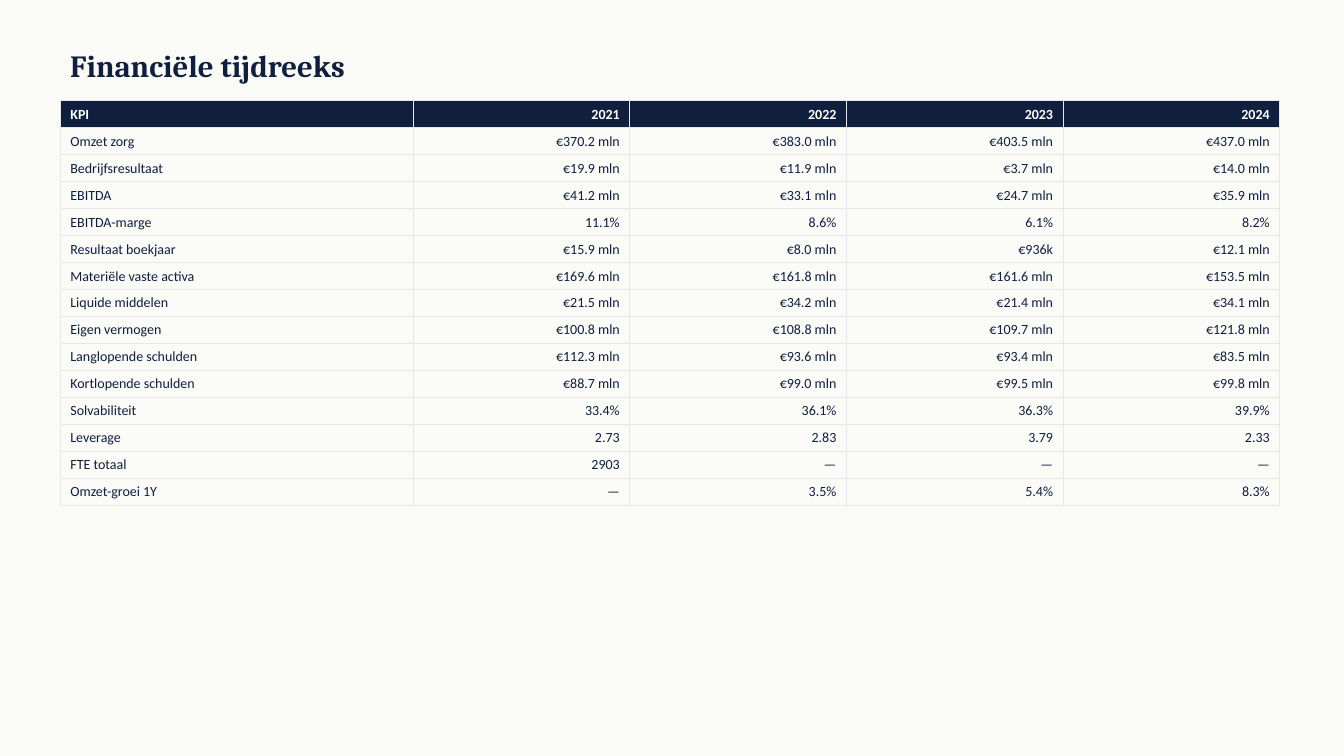
from lxml.etree import SubElement
from pptx import Presentation
from pptx.dml.color import RGBColor
from pptx.enum.text import MSO_ANCHOR, PP_ALIGN
from pptx.oxml.ns import qn
from pptx.util import Cm, Pt

TITLE = "Financiële tijdreeks"
HEADER = ("KPI", "2021", "2022", "2023", "2024")
KPIS = [
    ("Omzet zorg", "€370.2 mln", "€383.0 mln", "€403.5 mln", "€437.0 mln"),
    ("Bedrijfsresultaat", "€19.9 mln", "€11.9 mln", "€3.7 mln", "€14.0 mln"),
    ("EBITDA", "€41.2 mln", "€33.1 mln", "€24.7 mln", "€35.9 mln"),
    ("EBITDA-marge", "11.1%", "8.6%", "6.1%", "8.2%"),
    ("Resultaat boekjaar", "€15.9 mln", "€8.0 mln", "€936k", "€12.1 mln"),
    ("Materiële vaste activa", "€169.6 mln", "€161.8 mln", "€161.6 mln", "€153.5 mln"),
    ("Liquide middelen", "€21.5 mln", "€34.2 mln", "€21.4 mln", "€34.1 mln"),
    ("Eigen vermogen", "€100.8 mln", "€108.8 mln", "€109.7 mln", "€121.8 mln"),
    ("Langlopende schulden", "€112.3 mln", "€93.6 mln", "€93.4 mln", "€83.5 mln"),
    ("Kortlopende schulden", "€88.7 mln", "€99.0 mln", "€99.5 mln", "€99.8 mln"),
    ("Solvabiliteit", "33.4%", "36.1%", "36.3%", "39.9%"),
    ("Leverage", "2.73", "2.83", "3.79", "2.33"),
    ("FTE totaal", "2903", "—", "—", "—"),
    ("Omzet-groei 1Y", "—", "3.5%", "5.4%", "8.3%"),
]

NAVY = RGBColor(0x0F, 0x1F, 0x3D)
WHITE = RGBColor(0xFF, 0xFF, 0xFF)
IVORY = RGBColor(0xFA, 0xFA, 0xF7)
GRID = RGBColor(0xE5, 0xE7, 0xEB)

LEFT = Cm(1.52)
TABLE_TOP = Cm(2.54)
KPI_WIDTH, YEAR_WIDTH = Cm(8.89), Cm(5.46)
ROW_HEIGHT = Cm(0.68)


def style_font(p, name, size, color, bold):
    p.font.name = name
    p.font.size = Pt(size)
    p.font.bold = bold
    p.font.color.rgb = color


def add_borders(cell):
    tc_pr = cell._tc.get_or_add_tcPr()
    for side in ("a:lnL", "a:lnR", "a:lnT", "a:lnB"):
        line = SubElement(tc_pr, qn(side), w=str(Pt(0.5)))
        fill = SubElement(line, qn("a:solidFill"))
        SubElement(fill, qn("a:srgbClr"), val=str(GRID))


def add_title(slide):
    tf = slide.shapes.add_textbox(LEFT, Cm(1.02), Cm(30.48), Cm(1.27)).text_frame
    tf.word_wrap = True
    tf.vertical_anchor = MSO_ANCHOR.MIDDLE
    p = tf.paragraphs[0]
    p.text = TITLE
    style_font(p, "Cambria", 22, NAVY, True)


def add_kpi_table(slide):
    rows = [HEADER, *KPIS]
    widths = [KPI_WIDTH] + [YEAR_WIDTH] * (len(HEADER) - 1)
    table = slide.shapes.add_table(
        len(rows), len(widths), LEFT, TABLE_TOP, sum(widths), ROW_HEIGHT * len(rows)
    ).table
    table.horz_banding = False
    for column, width in zip(table.columns, widths):
        column.width = width
    for r, values in enumerate(rows):
        table.rows[r].height = ROW_HEIGHT
        is_header = r == 0
        for c, value in enumerate(values):
            cell = table.cell(r, c)
            add_borders(cell)
            if is_header:
                cell.fill.solid()
                cell.fill.fore_color.rgb = NAVY
            else:
                cell.fill.background()
            p = cell.text_frame.paragraphs[0]
            p.text = value
            p.alignment = PP_ALIGN.RIGHT if c else PP_ALIGN.LEFT
            style_font(p, "Calibri", 10, WHITE if is_header else NAVY, is_header)


def main():
    prs = Presentation()
    prs.slide_width, prs.slide_height = Cm(33.87), Cm(19.05)
    slide = prs.slides.add_slide(prs.slide_layouts[6])
    slide.background.fill.solid()
    slide.background.fill.fore_color.rgb = IVORY
    add_title(slide)
    add_kpi_table(slide)
    prs.save("out.pptx")


if __name__ == "__main__":
    main()
